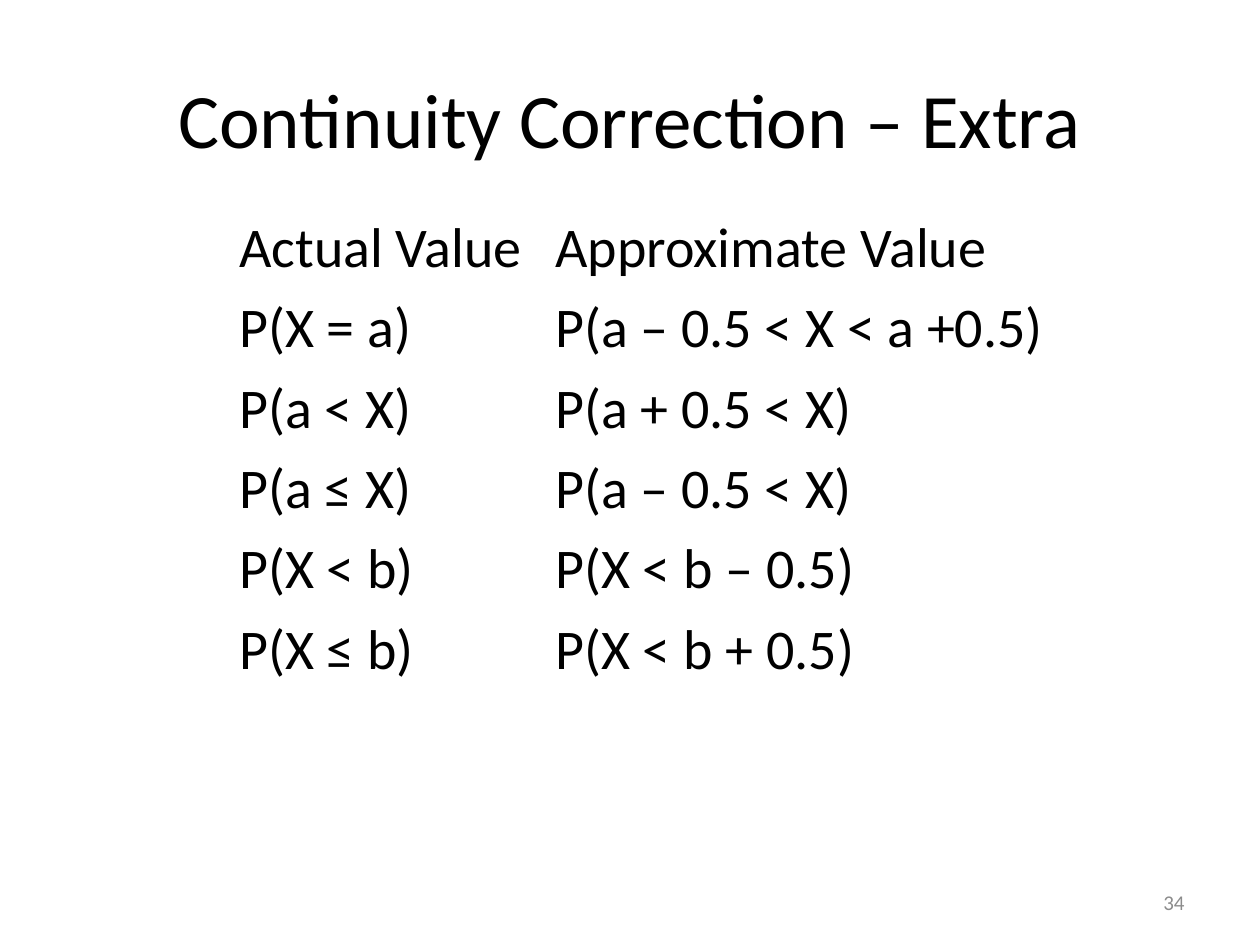
from lxml.etree import SubElement
from pptx import Presentation
from pptx.dml.color import RGBColor
from pptx.enum.text import MSO_ANCHOR, PP_ALIGN
from pptx.oxml.ns import qn
from pptx.util import Inches, Pt

WIDE, HIGH = 10, 7.5
ROWS = [
    ("Actual Value", "Approximate Value"),
    ("P(X = a)", "P(a – 0.5 < X < a +0.5)"),
    ("P(a < X)", "P(a + 0.5 < X)"),
    ("P(a ≤ X)", "P(a – 0.5 < X)"),
    ("P(X < b)", "P(X < b – 0.5)"),
    ("P(X ≤ b)", "P(X < b + 0.5)"),
]


def color(code):
    return RGBColor.from_string(code)


def edge(cell, code, width):
    """Draw all four borders of a table cell."""
    props = cell._tc.get_or_add_tcPr()
    for side in ("lnL", "lnR", "lnT", "lnB"):
        line = SubElement(props, qn(f"a:{side}"), w=str(Pt(width)))
        fill = SubElement(line, qn("a:solidFill"))
        SubElement(fill, qn("a:srgbClr"), val=code)


class Deck:
    font, ink, paper = "Calibri", "000000", "FFFFFF"

    def __init__(self):
        self.show = Presentation()
        self.show.slide_width, self.show.slide_height = Inches(WIDE), Inches(HIGH)
        self.slide = self.show.slides.add_slide(self.show.slide_layouts[6])
        fill = self.slide.background.fill
        fill.solid()
        fill.fore_color.rgb = color(self.paper)

    def box(self, x, y, w, h):
        """Turn shares of the slide's size into lengths."""
        return [Inches(n) for n in (x * WIDE, y * HIGH, w * WIDE, h * HIGH)]

    def label(self, frame, words, size, align=PP_ALIGN.LEFT, ink=None):
        """Put one styled run into the first paragraph of a frame."""
        para = frame.paragraphs[0]
        para.alignment = align
        run = para.add_run()
        run.text = words
        run.font.name, run.font.size, run.font.bold = self.font, Pt(size), False
        run.font.color.rgb = color(ink or self.ink)

    def text(self, place, words, size, align, ink=None):
        frame = self.slide.shapes.add_textbox(*self.box(*place)).text_frame
        frame.word_wrap = True
        frame.vertical_anchor = MSO_ANCHOR.MIDDLE
        self.label(frame, words, size, align, ink)

    def table(self, place, rows, shares, size):
        """Fill a plain table whose columns take the given shares of its width."""
        area = self.box(*place)
        grid = self.slide.shapes.add_table(len(rows), len(shares), *area).table
        grid.first_row = grid.horz_banding = False
        for col, share in zip(grid.columns, shares):
            col.width = int(area[2] * share)
        for r, row in enumerate(rows):
            for c, words in enumerate(row):
                cell = grid.cell(r, c)
                edge(cell, self.paper, 1)
                cell.fill.background()
                self.label(cell.text_frame, words, size)


def main():
    deck = Deck()
    deck.text((0.05, 0.04, 0.9, 0.17), "Continuity Correction – Extra", 44, PP_ALIGN.CENTER)
    deck.table((0.18, 0.22, 0.66, 0.51), ROWS, (0.38, 0.62), 32)
    deck.text((0.72, 0.93, 0.23, 0.05), "34", 12, PP_ALIGN.RIGHT, "8C8C8C")
    deck.show.save("out.pptx")


if __name__ == "__main__":
    main()
